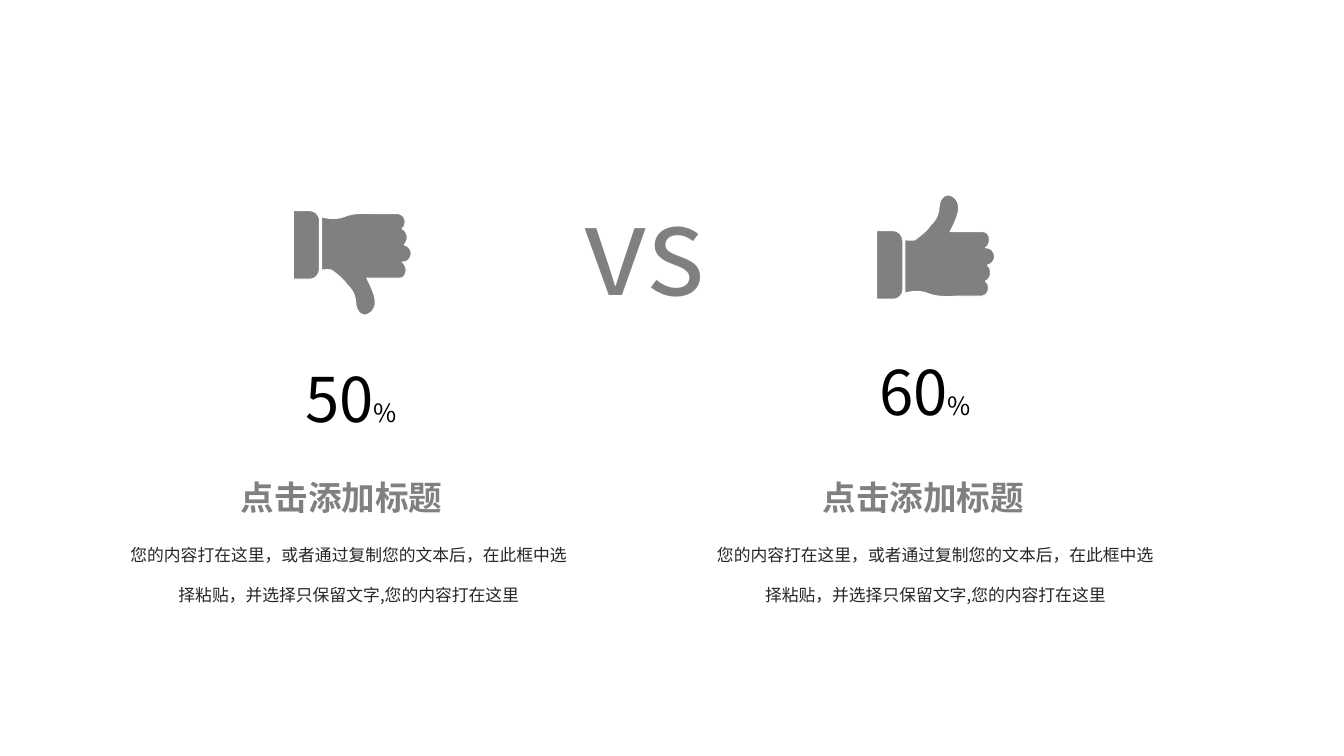
import lxml.etree
import pptx
import pptx.dml.color
import pptx.enum.text
import pptx.oxml.ns
import pptx.util

Pt = pptx.util.Pt
qn = pptx.oxml.ns.qn
ALIGN = pptx.enum.text.PP_ALIGN
GREY, BLACK, DARK, WHITE = "808080", "000000", "262626", "FFFFFF"
BODY = "您的内容打在这里，或者通过复制您的文本后，在此框中选择粘贴，并选择只保留文字,您的内容打在这里"

# Thumb-down outline in units of 0.72 pt: each step is a line (x, y)
# or a curve (two control points and an end point)
UNIT = 0.72
ICON_HEIGHT = 108
CUFF = [(26, 9), (26, 58), (26, 64, 21, 68, 17, 68), (0, 68), (0, 0), (17, 0),
        (21, 0, 26, 4, 26, 9)]
HAND = [(117, 42), (117, 38, 113, 34, 110, 34), (112, 32, 113, 30, 113, 26),
        (113, 23, 111, 19, 108, 18), (110, 17, 111, 14, 111, 11),
        (111, 7, 108, 3, 104, 3), (79, 3), (79, 3, 61, 1, 50, 6),
        (40, 10, 28, 6, 28, 6), (28, 59), (28, 59, 36, 58, 38, 59),
        (42, 62, 50, 68, 53, 73), (57, 77, 61, 81, 62, 91),
        (62, 101, 70, 108, 78, 100), (85, 92, 80, 81, 73, 67), (106, 67),
        (109, 67, 112, 64, 112, 59), (112, 56, 110, 52, 108, 51), (109, 51),
        (113, 51, 117, 48, 117, 42)]


def color(code):
    return pptx.dml.color.RGBColor.from_string(code)


class Painter:
    font = "Noto Sans CJK SC"

    def __init__(self, page):
        self.page = page

    def group(self):
        return self.page.shapes.add_group_shape()

    def text(self, left, top, width, height, spans, code, align=ALIGN.LEFT,
             bold=False, wrap=True, spacing=None, group=None):
        """Add one paragraph made of (words, size) spans."""
        parent = self.page if group is None else group
        box = parent.shapes.add_textbox(Pt(left), Pt(top), Pt(width), Pt(height))
        frame = box.text_frame
        frame.word_wrap = wrap
        frame.auto_size = pptx.enum.text.MSO_AUTO_SIZE.SHAPE_TO_FIT_TEXT
        para = frame.paragraphs[0]
        para.alignment = align
        para.line_spacing = spacing
        for words, size in spans:
            span = para.add_run()
            span.text = words
            span.font.size = Pt(size)
            span.font.bold = bold
            span.font.color.rgb = color(code)
            span.font.name = self.font
            east_asian = lxml.etree.SubElement(span.font._element, qn("a:ea"))
            east_asian.set("typeface", self.font)

    def thumb(self, left, top, up=False):
        """Add the thumb icon, mirrored top to bottom when it points up."""
        def place(x, y):
            y = ICON_HEIGHT - y if up else y
            return Pt(left + x * UNIT), Pt(top + y * UNIT)

        def corners(steps):
            """Give three points for each step; a line repeats its end."""
            for step in steps:
                values = step if len(step) == 6 else step * 3
                yield from (place(*values[at:at + 2]) for at in (0, 2, 4))

        builder = self.page.shapes.build_freeform(*place(*CUFF[0]))
        builder.add_line_segments(corners(CUFF[1:]), close=True)
        builder.move_to(*place(*HAND[0]))
        builder.add_line_segments(corners(HAND[1:]), close=True)
        shape = builder.convert_to_shape()

        # Join every three segments into one curve
        lines = list(shape._element.iter(qn("a:lnTo")))
        for trio in zip(lines[::3], lines[1::3], lines[2::3]):
            curve = lxml.etree.Element(qn("a:cubicBezTo"))
            trio[0].addprevious(curve)
            for line in trio:
                curve.append(line[0])
                line.getparent().remove(line)

        shape.shadow.inherit = False
        shape.fill.solid()
        shape.fill.fore_color.rgb = color(GREY)
        shape.line.color.rgb = color(WHITE)
        shape.line.width = Pt(0.75)


def main():
    deck = pptx.Presentation()
    deck.slide_width, deck.slide_height = Pt(960), Pt(540)
    painter = Painter(deck.slides.add_slide(deck.slide_layouts[6]))

    # Two sides: body text with heading, share and icon
    sides = [("50", (211, 254.2), (209.5, 150.5), False, 164.2, 81.4),
             ("60", (621, 249.4), (626.2, 136), True, 579.6, 500.4)]
    for share, share_at, icon_at, up, heading_left, body_left in sides:
        group = painter.group()
        painter.text(body_left, 370.8, 335.5, 65.5, [(BODY, 12)], DARK,
                     ALIGN.CENTER, spacing=2.0, group=group)
        painter.text(heading_left, 337, 159.8, 36, [("点击添加标题", 24)], GREY,
                     ALIGN.CENTER, bold=True, wrap=False, group=group)
        painter.text(*share_at, 85, 60.5, [(share, 44), ("%", 18)], BLACK)
        painter.thumb(*icon_at, up)

    # Centre mark
    painter.text(398.2, 119.5, 124.6, 113.8, [("vs", 88)], GREY, ALIGN.CENTER)

    deck.save("out.pptx")


if __name__ == "__main__":
    main()
